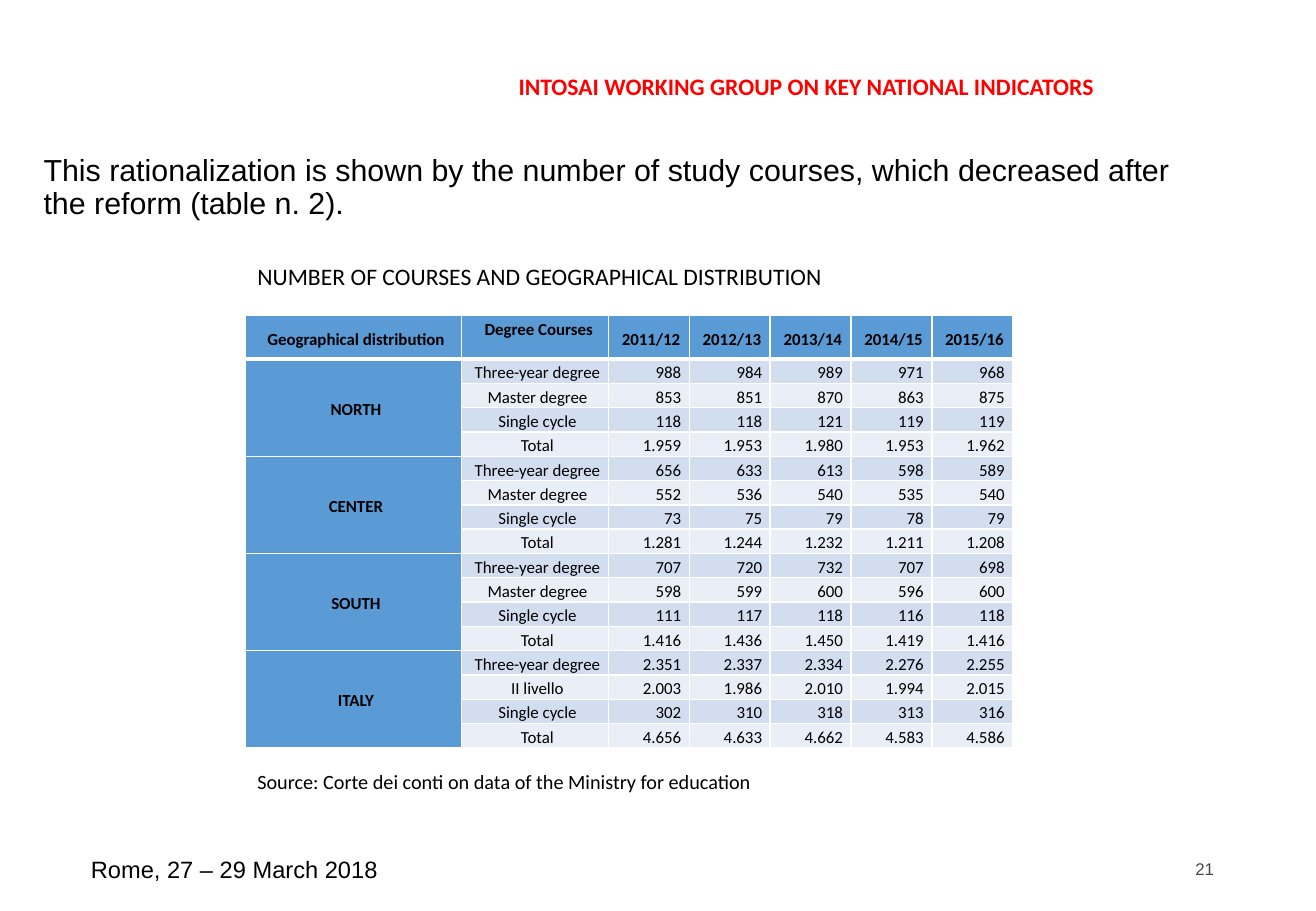
"""Build the slide on the number of study courses by area."""
from dataclasses import dataclass
from typing import Any

from lxml import etree
from pptx import Presentation
from pptx.dml.color import RGBColor
from pptx.enum.shapes import MSO_SHAPE
from pptx.enum.text import MSO_ANCHOR, MSO_AUTO_SIZE, PP_ALIGN
from pptx.oxml.ns import qn
from pptx.util import Cm, Pt

RECT = MSO_SHAPE.RECTANGLE
TOP, MID = MSO_ANCHOR.TOP, MSO_ANCHOR.MIDDLE
LEFT, MIDST, RIGHT = PP_ALIGN.LEFT, PP_ALIGN.CENTER, PP_ALIGN.RIGHT
FIXED = MSO_AUTO_SIZE.NONE

HUES = {"white": "FFFFFF", "black": "000000", "red": "FF0000", "gray": "48484A",
        "blue": "5B9BD5", "odd": "D2DEEF", "even": "EAEFF7"}

YEARS = ["2011/12", "2012/13", "2013/14", "2014/15", "2015/16"]
LEVELS = ["Three-year degree", "Master degree", "Single cycle", "Total"]
AREAS = {
    "NORTH": ["988 984 989 971 968", "853 851 870 863 875",
              "118 118 121 119 119", "1.959 1.953 1.980 1.953 1.962"],
    "CENTER": ["656 633 613 598 589", "552 536 540 535 540",
               "73 75 79 78 79", "1.281 1.244 1.232 1.211 1.208"],
    "SOUTH": ["707 720 732 707 698", "598 599 600 596 600",
              "111 117 118 116 118", "1.416 1.436 1.450 1.419 1.416"],
    "ITALY": ["2.351 2.337 2.334 2.276 2.255", "2.003 1.986 2.010 1.994 2.015",
              "302 310 318 313 316", "4.656 4.633 4.662 4.583 4.586"],
}
WIDTHS = [4.52, 3.07] + [1.69] * len(YEARS)
HEAD, ROW = 0.91, 0.46


@dataclass
class Label:
    """A text block with its place in centimetres and its format."""
    text: str
    place: tuple[float, float, float, float]
    size: int
    face: str = "Calibri"
    hue: str = "black"
    bold: bool = False
    align: Any = LEFT
    anchor: Any = MID
    wrap: bool = False
    solid: bool = True
    inset: tuple[float, float] = (0.25, 0.13)
    pitch: float = 1.0


@dataclass
class Entry:
    """A table cell with its text and format."""
    text: str
    fill: str
    align: Any = MIDST
    anchor: Any = TOP
    bold: bool = False
    left: float = 0.13
    right: float = 0.03
    under: int = 1


TITLE = Label("This rationalization is shown by the number of study courses, "
              "which decreased after the reform (table n. 2).",
              (0.66, 3.12, 24.99, 2.34), 18, "Arial", anchor=TOP, wrap=True,
              solid=False, pitch=0.9)
GROUP = Label("INTOSAI WORKING GROUP ON KEY NATIONAL INDICATORS",
              (10.69, 1.42, 12.45, 0.76), 14, hue="red", bold=True,
              inset=(0.15, 0.08))
NOTES = [
    Label("NUMBER OF COURSES AND GEOGRAPHICAL DISTRIBUTION",
          (5.13, 5.46, 9.8, 0.64), 14),
    Label("Source: Corte dei conti on data of the Ministry for education",
          (5.13, 15.65, 11.2, 1.4), 12),
    Label("Rome, 27 – 29 March 2018", (1.65, 17.75, 6.83, 0.86), 14, "Arial",
          wrap=True, solid=False),
    Label("21", (19.43, 17.65, 6.2, 1.02), 10, "Arial", "gray", align=RIGHT,
          wrap=True, solid=False),
]


def apply(thing: Any, look: dict[str, Any]) -> None:
    """Set each named value on the object."""
    for name, value in look.items():
        setattr(thing, name, value)


def paint(fill: Any, hue: str) -> None:
    """Give a fill one solid colour."""
    fill.solid()
    fill.fore_color.rgb = RGBColor.from_string(HUES[hue])


def write(frame: Any, text: str, align: Any, pitch: float, size: int,
          face: str, hue: str, bold: bool) -> None:
    """Put one formatted paragraph into a text frame."""
    para = frame.paragraphs[0]
    run = para.add_run()
    run.text = text
    apply(para, {"alignment": align, "line_spacing": pitch})
    apply(run.font, {"name": face, "size": Pt(size), "bold": bold})
    run.font.color.rgb = RGBColor.from_string(HUES[hue])


def dress(shape: Any, label: Label) -> None:
    """Place a shape and fill in its text."""
    spots = ("left", "top", "width", "height")
    apply(shape, {name: Cm(value) for name, value in zip(spots, label.place)})
    side, edge = map(Cm, label.inset)
    frame = shape.text_frame
    apply(frame, {"margin_left": side, "margin_right": side,
                  "margin_top": edge, "margin_bottom": edge,
                  "auto_size": FIXED, "word_wrap": label.wrap,
                  "vertical_anchor": label.anchor})
    write(frame, label.text, label.align, label.pitch, label.size,
          label.face, label.hue, label.bold)


def draw(slide: Any, label: Label) -> None:
    """Add a label as a white panel or a clear text box."""
    place = [Cm(value) for value in label.place]
    if label.solid:
        shape = slide.shapes.add_shape(RECT, *place)
        shape.shadow.inherit = False
        paint(shape.fill, "white")
        shape.line.fill.background()
    else:
        shape = slide.shapes.add_textbox(*place)
    dress(shape, label)


def border(cell: Any, under: int) -> None:
    """Draw white lines on the four sides of a cell."""
    props = cell._tc.get_or_add_tcPr()
    for tag, width in (("lnL", 1), ("lnR", 1), ("lnT", 1), ("lnB", under)):
        line = etree.SubElement(props, qn(f"a:{tag}"), w=str(Pt(width)))
        fill = etree.SubElement(line, qn("a:solidFill"))
        etree.SubElement(fill, qn("a:srgbClr"), val=HUES["white"])


def enter(cell: Any, entry: Entry) -> None:
    """Fill in and format one table cell."""
    border(cell, entry.under)
    paint(cell.fill, entry.fill)
    apply(cell, {"margin_left": Cm(entry.left), "margin_right": Cm(entry.right),
                 "margin_top": Cm(0.05), "margin_bottom": Cm(0),
                 "vertical_anchor": entry.anchor})
    write(cell.text_frame, entry.text, entry.align, 1.07, 10, "Calibri",
          "black", entry.bold)


def grid() -> list[list[Entry]]:
    """Lay out all table entries by row."""
    top = {"fill": "blue", "bold": True, "under": 3}
    rows = [[Entry("Geographical distribution", anchor=MID, **top),
             Entry("Degree Courses", left=0.18, **top)]
            + [Entry(year, align=LEFT, anchor=MID, left=0.28, **top)
               for year in YEARS]]
    for area, lines in AREAS.items():
        for index, (level, line) in enumerate(zip(LEVELS, lines)):
            fill = "even" if index % 2 else "odd"
            if area == "ITALY" and level == "Master degree":
                level = "II livello"
            rows.append([Entry("" if index else area, "blue", anchor=MID, bold=True),
                         Entry(level, fill)]
                        + [Entry(count, fill, RIGHT, right=0.17)
                           for count in line.split()])
    return rows


def chart(slide: Any) -> None:
    """Add the table of courses."""
    rows = grid()
    frame = slide.shapes.add_table(len(rows), len(WIDTHS), Cm(5.13), Cm(6.6),
                                   Cm(sum(WIDTHS)), Cm(HEAD + ROW * (len(rows) - 1)))
    table = frame.table
    for column, width in zip(table.columns, WIDTHS):
        column.width = Cm(width)
    for index, entries in enumerate(rows):
        table.rows[index].height = Cm(ROW if index else HEAD)
        for place, entry in enumerate(entries):
            enter(table.cell(index, place), entry)
    span = len(LEVELS)
    for start in range(1, len(rows), span):
        table.cell(start, 0).merge(table.cell(start + span - 1, 0))


def main() -> None:
    """Build and save the slide."""
    deck = Presentation()
    apply(deck, {"slide_width": Cm(27.51), "slide_height": Cm(19.05)})
    slide = deck.slides.add_slide(deck.slide_layouts[5])
    draw(slide, GROUP)
    dress(slide.shapes.title, TITLE)
    chart(slide)
    for note in NOTES:
        draw(slide, note)
    deck.save("out.pptx")


if __name__ == "__main__":
    main()
